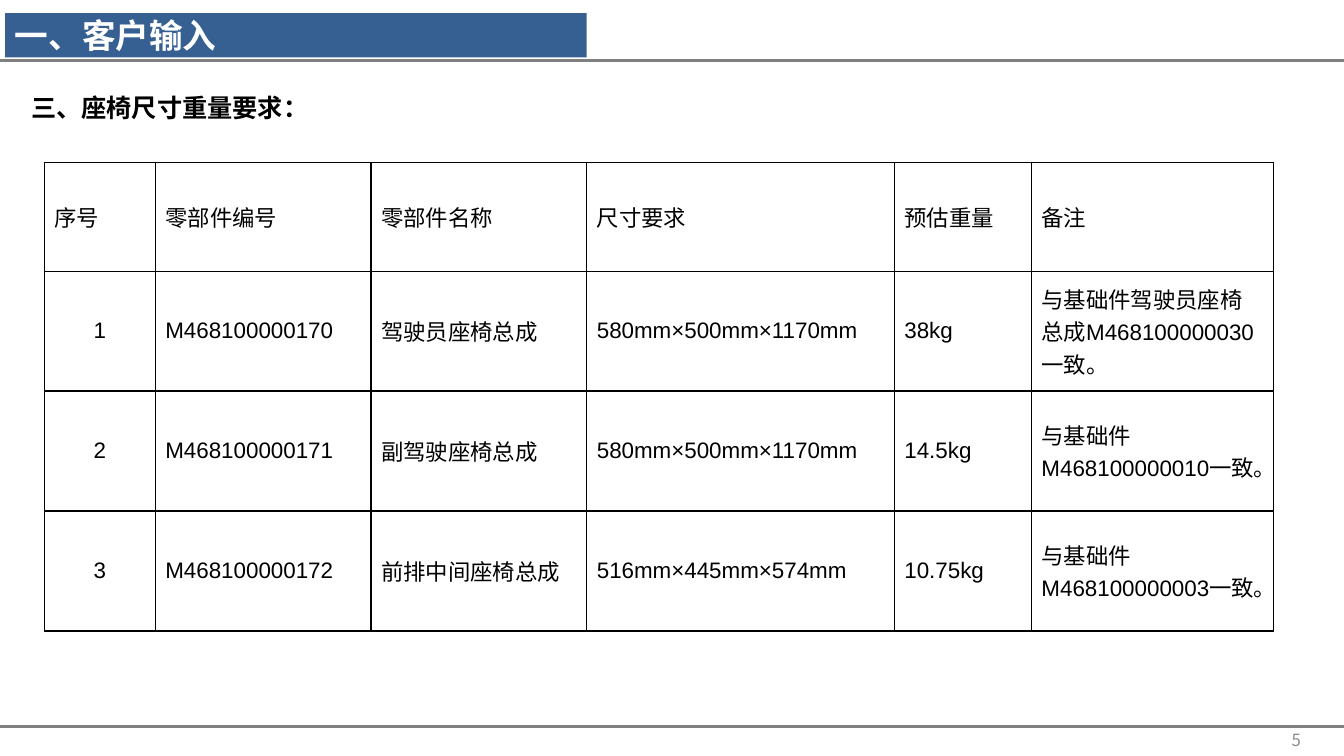
from pptx import Presentation
from pptx.dml.color import RGBColor
from pptx.enum.shapes import MSO_CONNECTOR as Link, MSO_SHAPE as Shape
from pptx.enum.text import MSO_ANCHOR as Anchor, PP_ALIGN as Align
from pptx.oxml import parse_xml
from pptx.oxml.ns import nsdecls, qn
from pptx.util import Inches, Pt

HEX = {"blue": "376092", "rule": "808080", "page": "8C8C8C",
       "white": "FFFFFF", "black": "000000"}
SANS = "Noto Sans CJK SC"
WIDE = 13.33


def write(frame, text, size, color, font=SANS, bold=False, align=Align.LEFT):
    """Fill the frame with one line of text, Chinese glyphs in SANS."""
    para = frame.paragraphs[0]
    para.alignment = align
    run = para.add_run()
    run.text = text
    run.font.size = Pt(size)
    run.font.bold = bold
    run.font.name = font
    run.font.color.rgb = RGBColor.from_string(HEX[color])
    east = parse_xml(f'<a:ea {nsdecls("a")} typeface="{SANS}"/>')
    run.font._element.find(qn("a:latin")).addnext(east)
    return para


deck = Presentation()
deck.slide_width, deck.slide_height = Inches(WIDE), Inches(7.5)
slide = deck.slides.add_slide(deck.slide_layouts[6])
shapes = slide.shapes

# Header and footer rules
for y in (0.6, 7.21):
    rule = shapes.add_connector(Link.STRAIGHT, 0, Inches(y), Inches(WIDE), Inches(y))
    rule.line.width = Pt(2)
    rule.line.color.rgb = RGBColor.from_string(HEX["rule"])
    rule._element.spPr.append(parse_xml(f'<a:effectLst {nsdecls("a")}/>'))

# Page number
page = shapes.add_textbox(Inches(9.89), Inches(7.14), Inches(3.11), Inches(0.4))
page.text_frame.word_wrap = True
page.text_frame.vertical_anchor = Anchor.MIDDLE
write(page.text_frame, "5", 12, "page", align=Align.RIGHT)

# Title bar
bar = shapes.add_shape(Shape.RECTANGLE, Inches(0.05), Inches(0.13),
                       Inches(5.77), Inches(0.44))
bar.shadow.inherit = False
bar.fill.solid()
bar.fill.fore_color.rgb = RGBColor.from_string(HEX["blue"])
bar.line.fill.background()
bar.text_frame.vertical_anchor = Anchor.MIDDLE
write(bar.text_frame, "一、客户输入", 24, "white", bold=True)

# Section heading
head = shapes.add_textbox(Inches(0.21), Inches(0.92), Inches(2.83), Inches(0.4))
head.text_frame.word_wrap = True
para = write(head.text_frame, "三、座椅尺寸重量要求：", 18, "black", bold=True)
para.line_spacing = 0.82

# Seat table
COLS = [1.1, 2.14, 2.14, 3.05, 1.36, 2.4]
ROWS = [1.08, 1.19, 1.19, 1.19]
DATA = [
    ["序号", "零部件编号", "零部件名称", "尺寸要求", "预估重量", "备注"],
    ["1", "M468100000170", "驾驶员座椅总成", "580mm×500mm×1170mm", "38kg",
     "与基础件驾驶员座椅总成M468100000030一致。"],
    ["2", "M468100000171", "副驾驶座椅总成", "580mm×500mm×1170mm", "14.5kg",
     "与基础件M468100000010一致。"],
    ["3", "M468100000172", "前排中间座椅总成", "516mm×445mm×574mm", "10.75kg",
     "与基础件M468100000003一致。"],
]
table = shapes.add_table(len(ROWS), len(COLS), Inches(0.44), Inches(1.61),
                         Inches(sum(COLS)), Inches(sum(ROWS))).table
table.first_row = table.horz_banding = False
for col, width in zip(table.columns, COLS):
    col.width = Inches(width)
for row, height in zip(table.rows, ROWS):
    row.height = Inches(height)

for r, line in enumerate(DATA):
    for c, text in enumerate(line):
        cell = table.cell(r, c)
        cell.vertical_anchor = Anchor.MIDDLE
        cell.fill.background()
        align = Align.CENTER if r and c == 0 else Align.LEFT
        write(cell.text_frame, text, 16, "black", "Arial", align=align)
        props = cell._tc.get_or_add_tcPr()
        for i, side in enumerate(("lnL", "lnR", "lnT", "lnB")):
            props.insert(i, parse_xml(
                f'<a:{side} {nsdecls("a")} w="{Pt(1)}"><a:solidFill>'
                f'<a:srgbClr val="{HEX["black"]}"/></a:solidFill></a:{side}>'))

deck.save("out.pptx")
